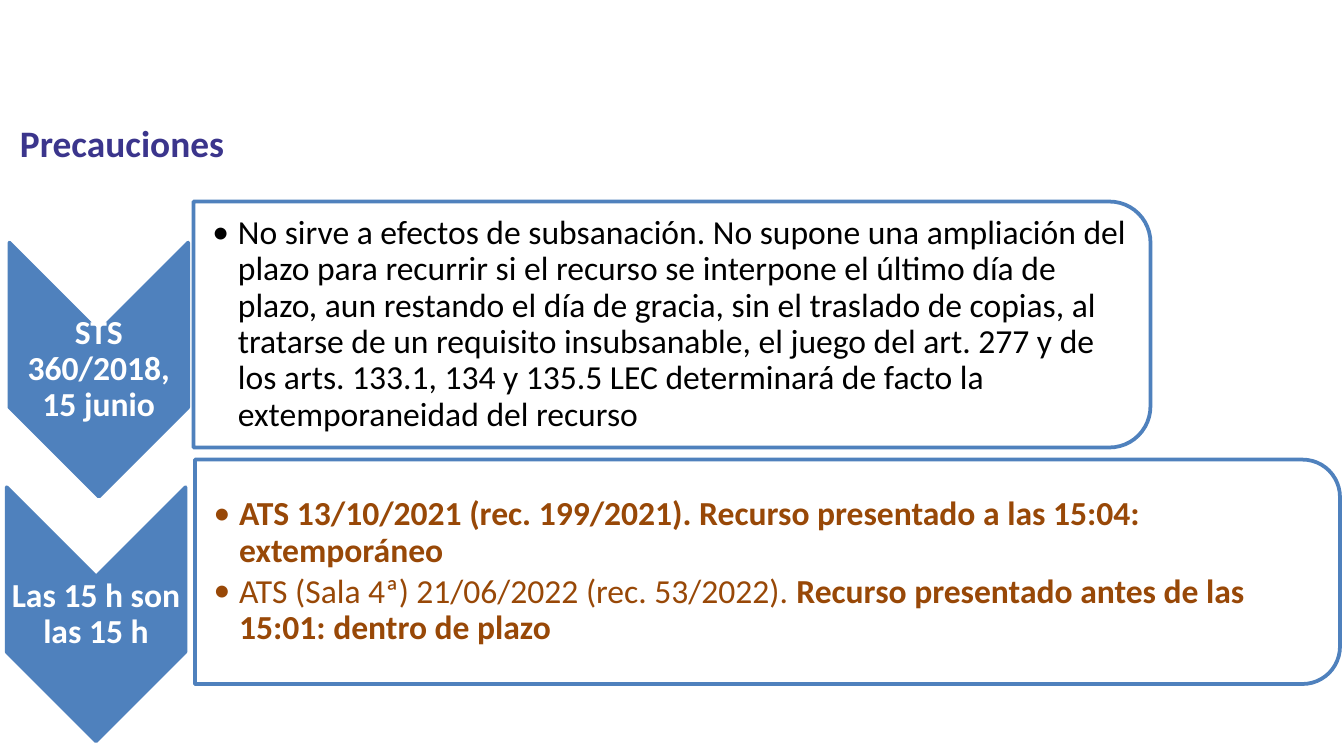
from dataclasses import dataclass

from lxml import etree
from pptx import Presentation
from pptx.dml.color import RGBColor
from pptx.enum.shapes import MSO_SHAPE
from pptx.enum.text import MSO_ANCHOR, PP_ALIGN
from pptx.oxml.ns import qn
from pptx.util import Inches, Pt

CHEVRON = MSO_SHAPE.CHEVRON
PANEL = MSO_SHAPE.ROUND_2_SAME_RECTANGLE
MIDDLE = MSO_ANCHOR.MIDDLE
LEFT, CENTER = PP_ALIGN.LEFT, PP_ALIGN.CENTER
WIDTH = Inches(10)
HEIGHT = WIDTH * 9 // 16
CELL = WIDTH / 100


@dataclass(frozen=True)
class Theme:
    """Colours, font and type sizes of the slide."""

    font: str = "Calibri"
    title_size: int = 20
    body_size: int = 18
    line_width: int = 2
    title: str = "3B358C"
    blue: str = "4F81BD"
    white: str = "FFFFFF"
    black: str = "000000"
    brown: str = "984807"


THEME = Theme()

ROWS = [
    {
        "chevron": (0.7, 18.05, 13.3, 18.9),
        "label": "STS 360/2018, 15 junio",
        "panel": (14.4, 15, 71.2, 18.3),
        "color": THEME.black,
        "items": [[(
            "No sirve a efectos de subsanación. No supone una ampliación del plazo "
            "para recurrir si el recurso se interpone el último día de plazo, aun "
            "restando el día de gracia, sin el traslado de copias, al tratarse de un "
            "requisito insubsanable, el juego del art. 277 y de los arts. 133.1, 134 y "
            "135.5 LEC determinará de facto la extemporaneidad del recurso", False)]],
    },
    {
        "chevron": (0.5, 36.25, 13.3, 18.9),
        "label": "Las 15 h son las 15 h",
        "panel": (14.5, 34.2, 85.2, 16.7),
        "color": THEME.brown,
        "items": [
            [("ATS 13/10/2021 (rec. 199/2021). Recurso presentado a las 15:04: "
              "extemporáneo", True)],
            [("ATS (Sala 4ª) 21/06/2022 (rec. 53/2022). ", False),
             ("Recurso presentado antes de las 15:01: dentro de plazo", True)],
        ],
    },
]


def apply(target, values):
    """Set each named attribute on the target."""
    for name, value in values.items():
        setattr(target, name, value)


def cells(*lengths):
    """Convert grid cells to slide lengths."""
    return [round(length * CELL) for length in lengths]


def add_turned_shape(page, kind, area, opacity, fill):
    """Add a preset shape turned a quarter clockwise so that it covers the area."""
    left, top, width, height = area
    shape = page.shapes.add_shape(kind, *cells(
        left + (width - height) / 2, top + (height - width) / 2, height, width))
    shape.rotation = 90
    shape.shadow.inherit = False
    shape.fill.solid()
    shape.fill.fore_color.rgb = RGBColor.from_string(fill)
    if opacity < 100:
        color = shape._element.spPr.find(qn("a:solidFill"))[0]
        etree.SubElement(color, qn("a:alpha"), val=str(opacity * 1000))
    shape.line.color.rgb = RGBColor.from_string(THEME.blue)
    shape.line.width = Pt(THEME.line_width)


def add_bullet(para):
    """Give the paragraph a bullet with a hanging indent."""
    para.level = 1
    properties = para._p.get_or_add_pPr()
    properties.set("marL", str(Inches(0.19)))
    properties.set("indent", str(-Inches(0.19)))
    etree.SubElement(properties, qn("a:buFont"), typeface=THEME.font)
    etree.SubElement(properties, qn("a:buChar"), char="•")


def add_text(page, area, paragraphs, color, size=THEME.body_size, align=LEFT,
             margins=(0.01, 0.01), space=0, spacing=0.9, bullets=False):
    """Add a wrapped text box of paragraphs made of (text, bold) spans."""
    frame = page.shapes.add_textbox(*cells(*area)).text_frame
    side, edge = (Inches(margin) for margin in margins)
    apply(frame, {"word_wrap": True, "vertical_anchor": MIDDLE, "margin_left": side,
                  "margin_right": edge, "margin_top": edge, "margin_bottom": edge})
    for index, spans in enumerate(paragraphs):
        para = frame.add_paragraph() if index else frame.paragraphs[0]
        if bullets:
            add_bullet(para)
        apply(para, {"alignment": align, "line_spacing": spacing,
                     "space_after": Pt(space)})
        for text, bold in spans:
            span = para.add_run()
            span.text = text
            apply(span.font, {"name": THEME.font, "size": Pt(size), "bold": bold})
            span.font.color.rgb = RGBColor.from_string(color)


def add_row(page, row):
    """Add a labelled chevron and the panel beside it."""
    left, top, width, height = row["chevron"]
    add_turned_shape(page, CHEVRON, row["chevron"], 100, THEME.blue)
    add_text(page, (left, top + width / 2, width, height - width),
             [[(row["label"], True)]], THEME.white, align=CENTER, space=6.3)
    left, top, width, height = row["panel"]
    add_turned_shape(page, PANEL, row["panel"], 90, THEME.white)
    add_text(page, (left, top + 0.85, width - 0.9, height - 1.7), row["items"],
             row["color"], margins=(0.14, 0.01), space=2.7, bullets=True)


def main():
    """Build the slide and save it."""
    deck = Presentation()
    apply(deck, {"slide_width": WIDTH, "slide_height": HEIGHT})
    page = deck.slides.add_slide(deck.slide_layouts[6])
    add_text(page, (0.5, 8.25, 90.6, 4.7), [[("Precauciones", True)]], THEME.title,
             size=THEME.title_size, margins=(0.1, 0.05), spacing=1.0)
    for row in ROWS:
        add_row(page, row)
    deck.save("out.pptx")


if __name__ == "__main__":
    main()
